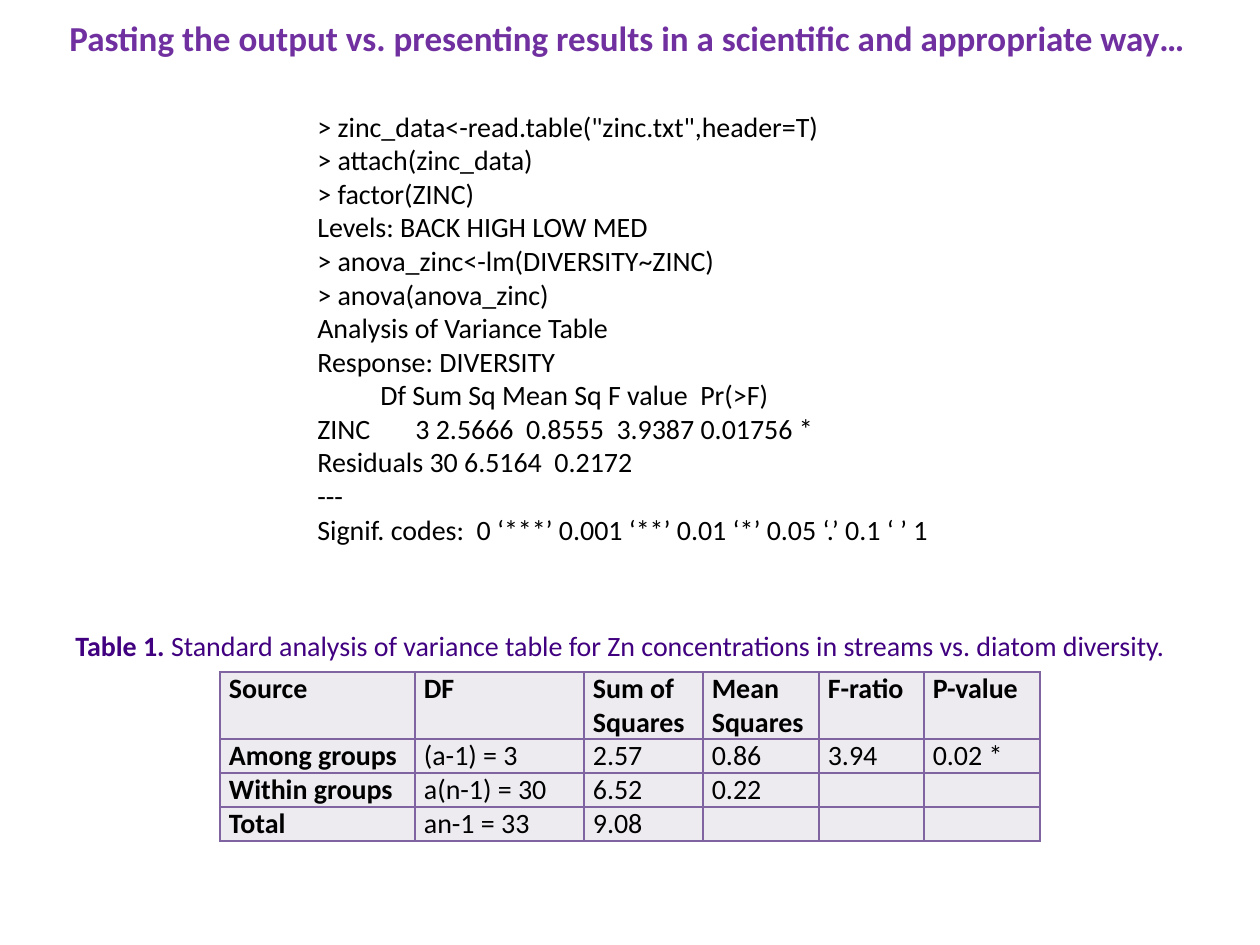
from dataclasses import dataclass

import lxml.etree
import pptx
import pptx.dml.color
import pptx.oxml.ns
import pptx.util

PX = 914400 // 126  # EMU in one px


@dataclass(frozen=True)
class Theme:
    font: str = "Calibri"
    title_size: int = 20
    body_size: int = 16
    title: str = "7030A0"
    caption: str = "400080"
    text: str = "000000"
    cell: str = "EDEAF0"
    border: str = "8064A2"


CODE_LINES = [
    '> zinc_data<-read.table("zinc.txt",header=T)',
    "> attach(zinc_data)",
    "> factor(ZINC)",
    "Levels: BACK HIGH LOW MED",
    "> anova_zinc<-lm(DIVERSITY~ZINC)",
    "> anova(anova_zinc)",
    "Analysis of Variance Table",
    "Response: DIVERSITY",
    "Df Sum Sq Mean Sq F value  Pr(>F)",
    "ZINC\t3 2.5666  0.8555  3.9387 0.01756 *",
    "Residuals 30 6.5164  0.2172",
    "---",
    "Signif. codes:  0 ‘***’ 0.001 ‘**’ 0.01 ‘*’ 0.05 ‘.’ 0.1 ‘ ’ 1",
]
HEADING_LINE, ZINC_LINE = 8, 9

ANOVA_ROWS = [
    ["Source", "DF", "Sum of Squares", "Mean Squares", "F-ratio", "P-value"],
    ["Among groups", "(a-1) = 3", "2.57", "0.86", "3.94", "0.02 *"],
    ["Within groups", "a(n-1) = 30", "6.52", "0.22", "", ""],
    ["Total", "an-1 = 33", "9.08", "", "", ""],
]
COLUMN_WIDTHS = [195, 169, 119, 116, 105, 116]
ROW_HEIGHTS = [67, 34, 34, 34]


class SlideBuilder:
    def __init__(self, slide, theme):
        self.slide = slide
        self.theme = theme

    def run(self, paragraph, text, size, color, bold=False):
        run = paragraph.add_run()
        run.text = text
        values = {"name": self.theme.font, "size": pptx.util.Pt(size), "bold": bold}
        for name, value in values.items():
            setattr(run.font, name, value)
        run.font.color.rgb = pptx.dml.color.RGBColor.from_string(color)

    def text(self, left, top, width, height, lines, size, color):
        """Each line is a list of (text, bold) pairs."""
        box = self.slide.shapes.add_textbox(*(n * PX for n in (left, top, width, height)))
        frame = box.text_frame
        frame.word_wrap = True
        for index, parts in enumerate(lines):
            paragraph = frame.add_paragraph() if index else frame.paragraphs[0]
            for text, bold in parts:
                self.run(paragraph, text, size, color, bold)
        return frame.paragraphs

    def indent(self, paragraph, px):
        properties = paragraph._p.get_or_add_pPr()
        for name, value in {"marL": px * PX, "indent": 0}.items():
            properties.set(name, str(value))

    def tab_stop(self, paragraph, px):
        tabs = self.child(paragraph._p.get_or_add_pPr(), "a:tabLst")
        self.child(tabs, "a:tab", pos=px * PX, algn="l")

    def child(self, parent, tag, **attributes):
        element = lxml.etree.SubElement(parent, pptx.oxml.ns.qn(tag))
        for name, value in attributes.items():
            element.set(name, str(value))
        return element

    def cell(self, cell, text, bold):
        margins = {"margin_left": 9, "margin_right": 9, "margin_top": 0, "margin_bottom": 0}
        for name, value in margins.items():
            setattr(cell, name, value * PX)
        # Borders come before the fill in the cell properties
        for side in ("a:lnL", "a:lnR", "a:lnT", "a:lnB"):
            line = self.child(cell._tc.get_or_add_tcPr(), side, w=pptx.util.Pt(1))
            fill = self.child(line, "a:solidFill")
            self.child(fill, "a:srgbClr", val=self.theme.border)
        cell.fill.solid()
        cell.fill.fore_color.rgb = pptx.dml.color.RGBColor.from_string(self.theme.cell)
        paragraph = cell.text_frame.paragraphs[0]
        if text:
            self.run(paragraph, text, self.theme.body_size, self.theme.text, bold)
        else:
            self.child(paragraph._p, "a:endParaRPr", sz=self.theme.body_size * 100)

    def table(self, left, top, rows, widths, heights):
        bounds = (left, top, sum(widths), sum(heights))
        frame = self.slide.shapes.add_table(len(rows), len(widths), *(n * PX for n in bounds))
        table = frame.table
        table.first_row = table.horz_banding = False
        for column, width in zip(table.columns, widths):
            column.width = width * PX
        for row, height in zip(table.rows, heights):
            row.height = height * PX
        for r, values in enumerate(rows):
            for c, value in enumerate(values):
                self.cell(table.cell(r, c), value, bold=r == 0 or c == 0)


def main():
    theme = Theme()
    presentation = pptx.Presentation()
    presentation.slide_width = pptx.util.Inches(10)
    presentation.slide_height = pptx.util.Inches(7.5)
    slide = presentation.slides.add_slide(presentation.slide_layouts[6])
    builder = SlideBuilder(slide, theme)

    # Console output
    lines = [[(line, False)] for line in CODE_LINES]
    paragraphs = builder.text(305, 103, 650, 454, lines, theme.body_size, theme.text)
    builder.indent(paragraphs[HEADING_LINE], 63)
    builder.tab_stop(paragraphs[ZINC_LINE], 98)

    # Analysis of variance table
    builder.table(220, 672, ANOVA_ROWS, COLUMN_WIDTHS, ROW_HEIGHTS)

    # Table caption
    caption = [
        ("Table 1. ", True),
        ("Standard analysis of variance table for Zn concentrations in streams"
         " vs. diatom diversity.", False),
    ]
    builder.text(63, 622, 1128, 47, [caption], theme.body_size, theme.caption)

    # Title
    title = "Pasting the output vs. presenting results in a scientific and appropriate way…"
    builder.text(57, 10, 1152, 55, [[(title, True)]], theme.title_size, theme.title)

    presentation.save("out.pptx")


if __name__ == "__main__":
    main()
